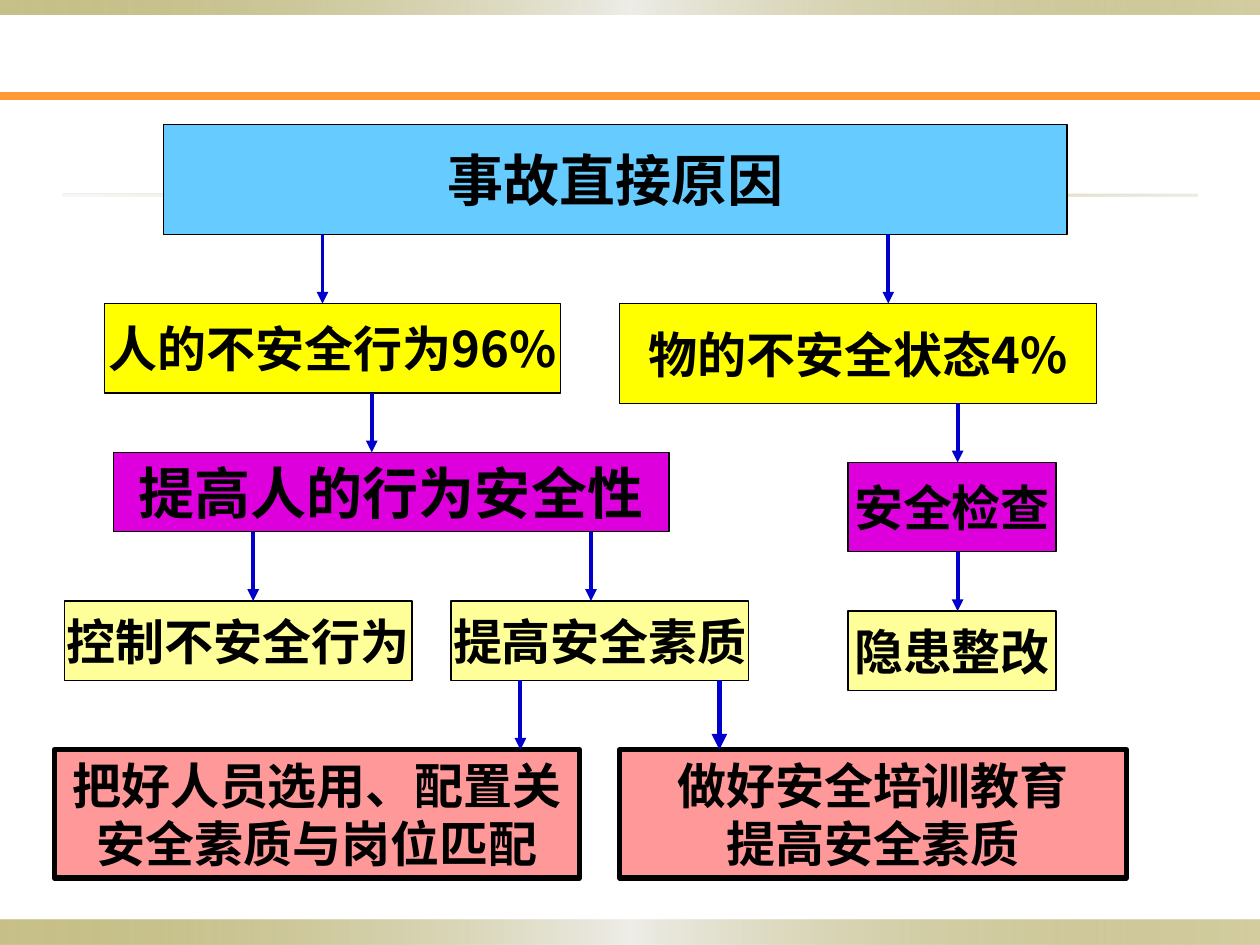
from lxml import etree
from pptx import Presentation
from pptx import oxml
from pptx import util as u
from pptx.dml.color import RGBColor
from pptx.enum import shapes, text
from pptx.oxml.ns import nsdecls, qn

Pt = u.Pt
BLACK = RGBColor(0x00, 0x00, 0x00)
ORANGE = RGBColor(0xFF, 0x99, 0x33)
SKY = RGBColor(0x66, 0xCC, 0xFF)
YELLOW = RGBColor(0xFF, 0xFF, 0x00)
MAGENTA = RGBColor(0xDD, 0x00, 0xDD)
CREAM = RGBColor(0xFF, 0xFF, 0x99)
PINK = RGBColor(0xFF, 0x99, 0x99)
BLUE = RGBColor(0x00, 0x00, 0xCC)
OLIVE = RGBColor(0x91, 0x84, 0x15)
PALE = RGBColor(0xEE, 0xED, 0xE8)
SAND = RGBColor(0xDC, 0xD9, 0xCC)

CJK = "Noto Sans CJK SC"
# Gradient stops: position %, colour, opacity %
BAND = [(0, OLIVE, 50), (50, PALE, 100), (100, OLIVE, 40)]
RULE = [(0, SAND, 20), (50, OLIVE, 40), (100, SAND, 50)]


def add_rect(s, left, top, width, height):
    sp = s.shapes.add_shape(shapes.MSO_SHAPE.RECTANGLE,
                            Pt(left), Pt(top), Pt(width), Pt(height))
    sp.shadow.inherit = False
    return sp


def add_band(s, left, top, width, height, stops):
    sp = add_rect(s, left, top, width, height)
    sp.line.fill.background()
    stop_xml = "".join(
        f'<a:gs pos="{pos * 1000}"><a:srgbClr val="{color}">'
        f'<a:alpha val="{alpha * 1000}"/></a:srgbClr></a:gs>'
        for pos, color, alpha in stops)
    grad = oxml.parse_xml(
        f'<a:gradFill {nsdecls("a")} rotWithShape="1"><a:gsLst>{stop_xml}</a:gsLst>'
        '<a:lin ang="0" scaled="1"/></a:gradFill>')
    sp.element.spPr.find(qn("a:prstGeom")).addnext(grad)


def add_box(s, left, top, width, height, fill, lines, size=28, font="Arial", border=0.75):
    sp = add_rect(s, left, top, width, height)
    sp.fill.solid()
    sp.fill.fore_color.rgb = fill
    sp.line.color.rgb = BLACK
    sp.line.width = Pt(border)
    tf = sp.text_frame
    tf.word_wrap = False
    tf.vertical_anchor = text.MSO_ANCHOR.MIDDLE
    tf.text = lines
    for p in tf.paragraphs:
        p.alignment = text.PP_ALIGN.CENTER
        p.font.name = font
        p.font.size = Pt(size)
        p.font.bold = True
        p.font.color.rgb = BLACK
    return sp


def add_line(s, x1, y1, x2, y2, color, width):
    line = s.shapes.add_connector(shapes.MSO_CONNECTOR.STRAIGHT, x1, y1, x2, y2)
    line.line.color.rgb = color
    line.line.width = Pt(width)
    etree.SubElement(line.element.spPr, qn("a:effectLst"))
    return line


def add_arrow(s, upper, lower, x, width=2.25):
    """Drop a vertical arrow from the bottom of one box to the top of another."""
    line = add_line(s, Pt(x), upper.top + upper.height, Pt(x), lower.top, BLUE, width)
    etree.SubElement(line.line._get_or_add_ln(), qn("a:tailEnd"), type="triangle")


def main():
    prs = Presentation()
    prs.slide_width, prs.slide_height = Pt(720), Pt(540)
    s = prs.slides.add_slide(prs.slide_layouts[6])

    # Page decoration
    add_band(s, 0, 525.6, 720, 14.4, BAND)
    add_band(s, 0, 0, 720, 8.6, BAND)
    add_line(s, 0, Pt(54.7), Pt(720), Pt(54.7), ORANGE, 4.5)
    add_band(s, 36, 110.9, 648, 1.4, RULE)

    # Causes
    cause = add_box(s, 93.6, 71.3, 516.2, 62.6, SKY, "事故直接原因", 32, CJK)
    human = add_box(s, 59.8, 173.5, 260.6, 51.1, YELLOW, "人的不安全行为96%", font=CJK)
    things = add_box(s, 354.2, 173.5, 272.2, 56.9, YELLOW, "物的不安全状态4%", font=CJK)

    # Measures
    behaviour = add_box(s, 64.8, 258.5, 317.5, 45.4, MAGENTA, "提高人的行为安全性", 32)
    control = add_box(s, 36.7, 343.4, 198.7, 45.4, CREAM, "控制不安全行为")
    quality = add_box(s, 257.8, 343.4, 169.9, 45.4, CREAM, "提高安全素质")
    check = add_box(s, 484.6, 264.2, 118.8, 51.1, MAGENTA, "安全检查")
    fix = add_box(s, 484.6, 349.2, 118.8, 45.4, CREAM, "隐患整改")

    # Actions
    staffing = add_box(s, 31, 428.4, 300.2, 73.4, PINK,
                       "把好人员选用、配置关\n安全素质与岗位匹配", border=3)
    training = add_box(s, 354.2, 428.4, 289.4, 73.4, PINK,
                       "做好安全培训教育\n提高安全素质", border=3)

    # Arrows between levels
    for upper, lower, x in [
        (cause, human, 184.3), (cause, things, 507.6),
        (human, behaviour, 212.4), (things, check, 547.2),
        (behaviour, control, 144.7), (behaviour, quality, 337.7),
        (check, fix, 547.2), (quality, staffing, 297.4),
    ]:
        add_arrow(s, upper, lower, x)
    add_arrow(s, quality, training, 411.1, 3)

    prs.save("out.pptx")


if __name__ == "__main__":
    main()
